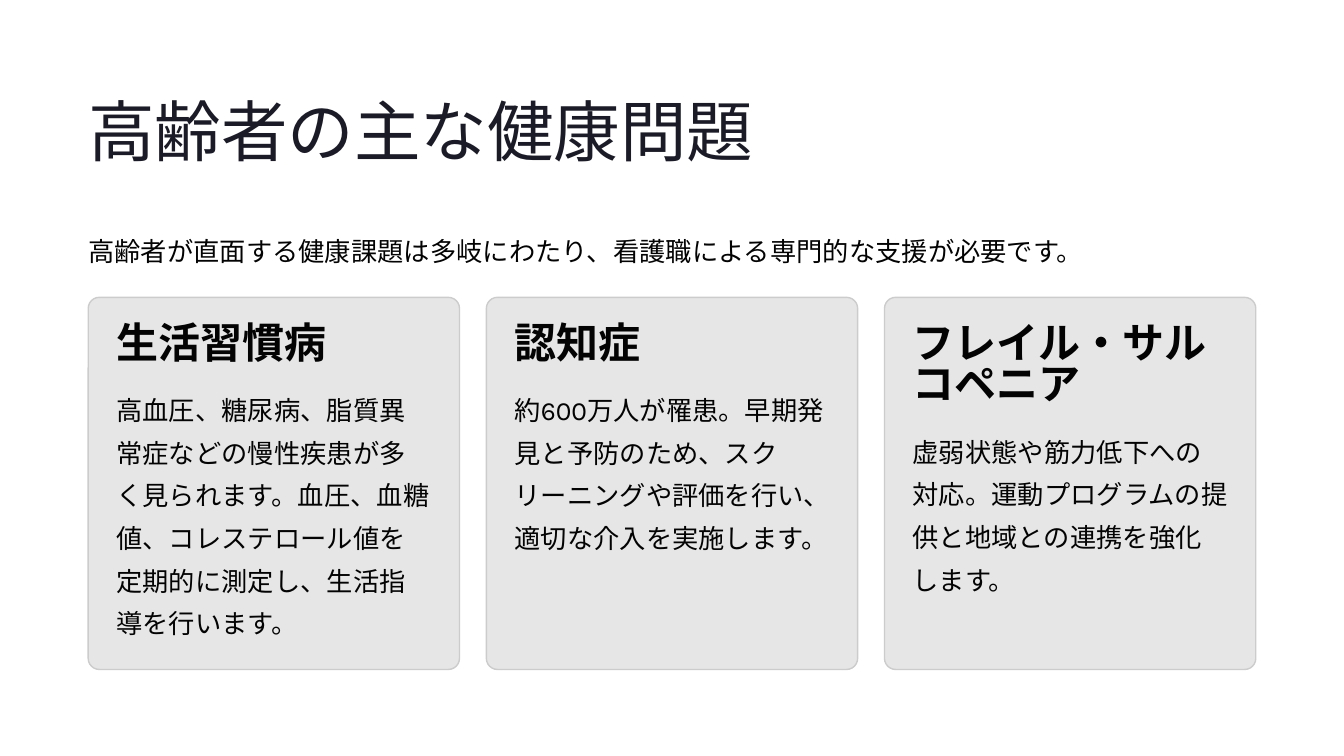
"""Builds a slide on the main health problems of older people, with three cards."""
import pptx
import pptx.dml.color
import pptx.enum.lang
import pptx.enum.shapes
import pptx.enum.text
import pptx.oxml.ns
import pptx.util
import lxml.etree

TITLE = "高齢者の主な健康問題"
INTRO = "高齢者が直面する健康課題は多岐にわたり、看護職による専門的な支援が必要です。"
CARDS = [
    ("生活習慣病", 1, "高血圧、糖尿病、脂質異常症などの慢性疾患が多く見られます。血圧、血糖値、コレステロール値を定期的に測定し、生活指導を行います。", 6),
    ("認知症", 1, "約600万人が罹患。早期発見と予防のため、スクリーニングや評価を行い、適切な介入を実施します。", 4),
    ("フレイル・サルコペニア", 2, "虚弱状態や筋力低下への対応。運動プログラムの提供と地域との連携を強化します。", 4),
]
COLORS = {"title": "1B1B27", "text": "030303", "card": "E6E6E6", "border": "CCCCCC"}
STYLES = {
    "title": ("Inter", 57, 71.5, "title", False),
    "heading": ("Inter", 36, 35.5, "text", True),
    "body": ("Karla", 22.5, 36.5, "text", False),
}
WIDTH, HEIGHT = 16, 9
MARGIN = 1.05
GAP = 0.32
CARD_TOP, CARD_HEIGHT = 3.54, 4.43
CARD_WIDTH = (WIDTH - 2 * MARGIN - GAP * (len(CARDS) - 1)) / len(CARDS)
PADDING = 0.335
HEADING_LINE, BODY_LINE = 0.495, 0.51
HEADING_GAP = 0.195


def color(name):
    return pptx.dml.color.RGBColor.from_string(COLORS[name])


def place(shape, left, top, width, height):
    shape.left, shape.top, shape.width, shape.height = (
        pptx.util.Inches(length) for length in (left, top, width, height))


def write(shape, text, style):
    font_name, size, line_height, color_name, bold = STYLES[style]
    frame = shape.text_frame
    frame.word_wrap = True
    frame.auto_size = pptx.enum.text.MSO_AUTO_SIZE.NONE
    frame.vertical_anchor = pptx.enum.text.MSO_ANCHOR.TOP
    frame.margin_left = frame.margin_right = frame.margin_top = frame.margin_bottom = 0
    para = frame.paragraphs[0]
    para.alignment = pptx.enum.text.PP_ALIGN.LEFT
    para.line_spacing = pptx.util.Pt(line_height)
    span = para.add_run()
    span.text = text
    span.font.name = font_name
    span.font.size = pptx.util.Pt(size)
    span.font.bold = bold
    span.font.color.rgb = color(color_name)
    span.font.language_id = pptx.enum.lang.MSO_LANGUAGE_ID.JAPANESE
    east_asian = lxml.etree.SubElement(span._r.get_or_add_rPr(), pptx.oxml.ns.qn("a:ea"))
    east_asian.set("typeface", font_name)


def add_text(page, area, text, style):
    box = page.shapes.add_textbox(0, 0, 0, 0)
    place(box, *area)
    write(box, text, style)


def add_card(page, column, heading, heading_lines, body, body_lines):
    left = MARGIN + column * (CARD_WIDTH + GAP)
    card = page.shapes.add_shape(pptx.enum.shapes.MSO_SHAPE.ROUNDED_RECTANGLE, 0, 0, 0, 0)
    place(card, left, CARD_TOP, CARD_WIDTH, CARD_HEIGHT)
    card.adjustments[0] = 0.03
    card.shadow.inherit = False
    card.fill.solid()
    card.fill.fore_color.rgb = color("card")
    card.line.color.rgb = color("border")
    card.line.width = pptx.util.Pt(1.2)

    text_left, text_width = left + PADDING, CARD_WIDTH - 2 * PADDING
    heading_top = CARD_TOP + PADDING
    heading_height = heading_lines * HEADING_LINE
    body_top = heading_top + heading_height + HEADING_GAP
    add_text(page, (text_left, heading_top, text_width, heading_height), heading, "heading")
    add_text(page, (text_left, body_top, text_width, body_lines * BODY_LINE), body, "body")


def main():
    deck = pptx.Presentation()
    deck.slide_width = pptx.util.Inches(WIDTH)
    deck.slide_height = pptx.util.Inches(HEIGHT)
    page = deck.slides.add_slide(deck.slide_layouts.get_by_name("Title Only"))
    place(page.shapes.title, MARGIN, 1.03, WIDTH / 2, 1)
    write(page.shapes.title, TITLE, "title")
    add_text(page, (MARGIN, 2.67, WIDTH - 2 * MARGIN, BODY_LINE), INTRO, "body")
    for column, card in enumerate(CARDS):
        add_card(page, column, *card)
    deck.save("out.pptx")


if __name__ == "__main__":
    main()
